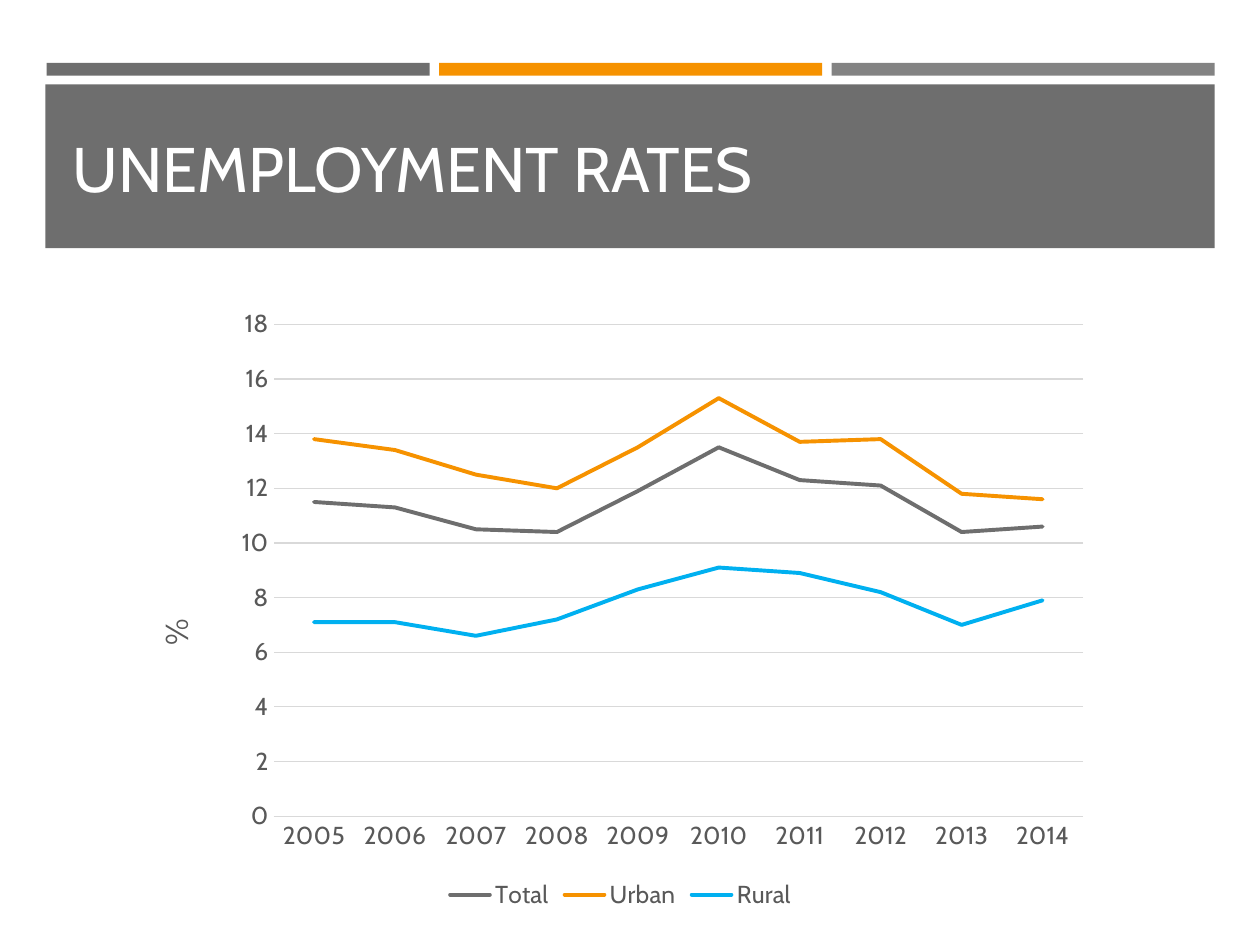
from lxml import etree
from pptx import Presentation
from pptx.chart.data import CategoryChartData
from pptx.dml.color import RGBColor
from pptx.enum.chart import XL_CHART_TYPE, XL_LEGEND_POSITION, XL_TICK_MARK
from pptx.enum.shapes import MSO_SHAPE
from pptx.enum.text import MSO_ANCHOR
from pptx.oxml.ns import qn
from pptx.util import Inches, Pt

LINE = XL_CHART_TYPE.LINE
BOTTOM = XL_LEGEND_POSITION.BOTTOM
NO_TICK = XL_TICK_MARK.NONE
RECT = MSO_SHAPE.RECTANGLE
MIDDLE = MSO_ANCHOR.MIDDLE

GRAY = RGBColor(0x6E, 0x6E, 0x6E)
SILVER = RGBColor(0x83, 0x83, 0x83)
ORANGE = RGBColor(0xF6, 0x92, 0x00)
BLUE = RGBColor(0x00, 0xB0, 0xF0)
WHITE = RGBColor(0xFF, 0xFF, 0xFF)
INK = RGBColor(0x59, 0x59, 0x59)
GRID = RGBColor(0xD9, 0xD9, 0xD9)

YEARS = [str(year) for year in range(2005, 2015)]
RATES = [
    ("Total", GRAY, (11.5, 11.3, 10.5, 10.4, 11.9, 13.5, 12.3, 12.1, 10.4, 10.6)),
    ("Urban", ORANGE, (13.8, 13.4, 12.5, 12, 13.5, 15.3, 13.7, 13.8, 11.8, 11.6)),
    ("Rural", BLUE, (7.1, 7.1, 6.6, 7.2, 8.3, 9.1, 8.9, 8.2, 7, 7.9)),
]


def place(parent, index, **parts):
    """Give a chart part a manual layout, in fractions of the chart."""
    for old in parent.findall(qn("c:layout")):
        parent.remove(old)
    layout = etree.Element(qn("c:layout"))
    manual = etree.SubElement(layout, qn("c:manualLayout"))
    for name, value in parts.items():
        etree.SubElement(manual, qn("c:" + name)).set("val", str(value))
    parent.insert(index, layout)


class Deck:
    def __init__(self, slide, face):
        self.slide = slide
        self.face = face

    def style(self, font, size, color):
        font.name = self.face
        font.size = Pt(size)
        font.bold = False
        font.color.rgb = color

    def label(self, frame, text, size=14, color=INK):
        run = frame.paragraphs[0].add_run()
        run.text = text
        self.style(run.font, size, color)

    def bar(self, left, top, width, height, color):
        shape = self.slide.shapes.add_shape(
            RECT, Inches(left), Inches(top), Inches(width), Inches(height))
        shape.shadow.inherit = False
        shape.fill.solid()
        shape.fill.fore_color.rgb = color
        shape.line.fill.background()

    def text(self, left, top, width, height, text, **form):
        box = self.slide.shapes.add_textbox(
            Inches(left), Inches(top), Inches(width), Inches(height))
        frame = box.text_frame
        frame.word_wrap = True
        frame.vertical_anchor = MIDDLE
        self.label(frame, text, **form)

    def rule(self, line, color, width):
        line.color.rgb = color
        line.width = Pt(width)

    def chart(self, left, top, width, height, cats, rows, unit):
        data = CategoryChartData()
        data.categories = cats
        for name, _, vals in rows:
            data.add_series(name, vals)
        chart = self.slide.shapes.add_chart(
            LINE, Inches(left), Inches(top), Inches(width), Inches(height),
            data).chart
        self.style(chart.font, 14, INK)
        chart.has_title = False
        chart.has_legend = True
        chart.legend.position = BOTTOM
        chart.legend.include_in_layout = False
        self.style(chart.legend.font, 14, INK)

        plot = chart.plots[0]
        plot.vary_by_categories = False
        for series, (_, color, _) in zip(plot.series, rows):
            series.smooth = False
            self.rule(series.format.line, color, 2.25)
            for line in series._element.iter(qn("a:ln")):
                line.set("cap", "rnd")

        years, scale = chart.category_axis, chart.value_axis
        for axis in (years, scale):
            axis.major_tick_mark = axis.minor_tick_mark = NO_TICK
            self.style(axis.tick_labels.font, 14, INK)
        self.rule(years.format.line, GRID, 0.75)
        scale.format.line.fill.background()
        scale.minimum_scale, scale.maximum_scale = 0, 18
        scale.major_unit = 2
        scale.has_major_gridlines = True
        self.rule(scale.major_gridlines.format.line, GRID, 0.75)

        title = scale.axis_title
        self.label(title.text_frame, unit, size=18)
        body = title.text_frame._txBody.find(qn("a:bodyPr"))
        body.set("rot", "-5400000")
        body.set("vert", "horz")
        place(title._element, 1, xMode="edge", yMode="edge", x=0.01, y=0.51)
        area = chart._chartSpace.chart.plotArea
        place(area, 0, layoutTarget="inner", xMode="edge", yMode="edge",
              x=0.14, y=0.04, w=0.84, h=0.8)


def main():
    show = Presentation()
    show.slide_width, show.slide_height = Inches(10), Inches(7.5)
    deck = Deck(show.slides.add_slide(show.slide_layouts[6]), "Cabin")
    for i, color in enumerate((GRAY, ORANGE, SILVER)):
        deck.bar(0.37 + i * 3.115, 0.5, 3.04, 0.1, color)
    deck.bar(0.36, 0.67, 9.28, 1.3, GRAY)
    deck.text(0.48, 0.77, 9.05, 1.11, "UNEMPLOYMENT RATES", size=36, color=WHITE)
    deck.chart(1.1, 2.38, 7.65, 4.88, YEARS, RATES, "%")
    show.save("out.pptx")


if __name__ == "__main__":
    main()
